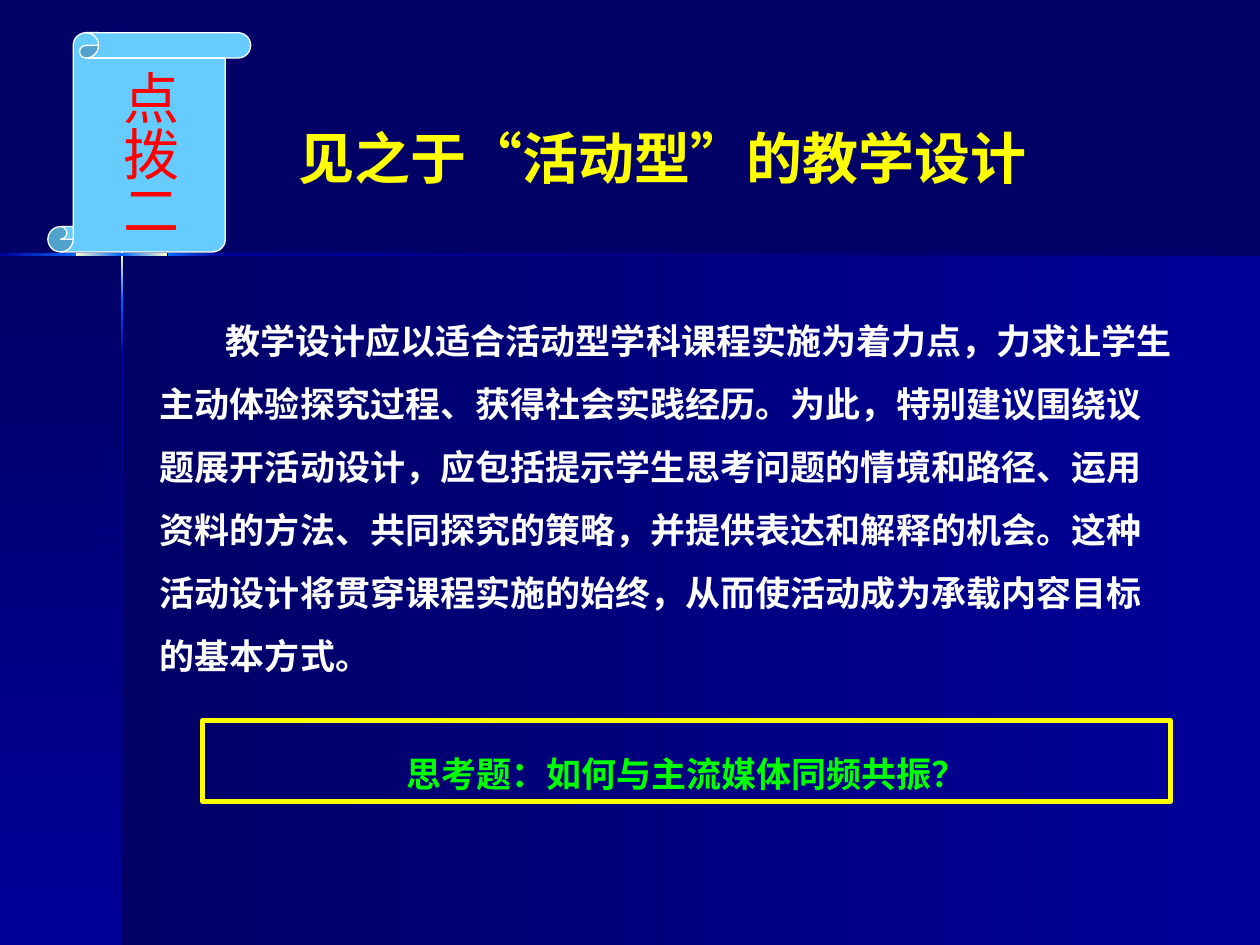
from copy import deepcopy

from pptx import Presentation
from pptx.dml.color import RGBColor
from pptx.enum import shapes, text
from pptx.oxml.ns import qn
from pptx.util import Inches, Pt

COLORS = {
    "navy": "000066", "blue": "000099", "bright": "0066FF", "cream": "FFFFCC",
    "sky": "66CCFF", "white": "FFFFFF", "yellow": "FFFF00", "red": "FF0000",
    "green": "00FF00",
}
ACROSS, DOWN = 0, 270
CJK = "Noto Sans CJK SC"


def color(name):
    return RGBColor.from_string(COLORS[name])


def write(shape, words, font, size, ink, bold, frame_format, paragraph_format):
    """Put one formatted paragraph into the shape."""
    frame = shape.text_frame
    for key, value in frame_format.items():
        setattr(frame, key, value)
    paragraph = frame.paragraphs[0]
    for key, value in paragraph_format.items():
        setattr(paragraph, key, value)
    run = paragraph.add_run()
    run.text = words
    for key, value in {"name": font, "size": Pt(size), "bold": bold}.items():
        setattr(run.font, key, value)
    run.font.color.rgb = color(ink)
    if font == CJK:
        east_asian = run.font._element.makeelement(qn("a:ea"), {"typeface": font})
        run.font._element.append(east_asian)
    return paragraph


prs = Presentation()
prs.slide_width, prs.slide_height = Inches(10), Inches(7.5)
slide = prs.slides.add_slide(prs.slide_layouts[6])
slide.background.fill.solid()
slide.background.fill.fore_color.rgb = color("navy")

# Backdrop: two panels and the thin glowing cross between them
backdrop = [
    (0.97, 2.02, 9.03, 5.48, ACROSS, ["navy", "blue"]),
    (0, 2.02, 0.97, 5.48, DOWN, ["navy", "blue"]),
    (0.96, 0.01, 0.02, 1.2, DOWN, ["navy", "blue"]),
    (0.96, 2.82, 0.02, 4.68, DOWN, ["blue", "navy"]),
    (1.77, 2.01, 8.23, 0.02, ACROSS, ["blue", "navy"]),
    (0.96, 2.38, 0.02, 0.44, DOWN, ["bright", "blue"]),
    (0.96, 1.21, 0.02, 0.44, DOWN, ["blue", "bright"]),
    (0.96, 1.65, 0.02, 0.73, DOWN, ["bright", "cream", "bright"]),
    (0, 2.01, 0.61, 0.02, ACROSS, ["blue", "bright"]),
    (1.33, 2.01, 0.44, 0.02, ACROSS, ["bright", "blue"]),
    (0.6, 2.01, 0.73, 0.02, ACROSS, ["cream", "bright", "cream"]),
]
for left, top, width, height, angle, stops in backdrop:
    panel = slide.shapes.add_shape(
        shapes.MSO_SHAPE.RECTANGLE, Inches(left), Inches(top), Inches(width), Inches(height))
    panel.shadow.inherit = False
    panel.line.fill.background()
    panel.fill.gradient()
    panel.fill.gradient_angle = angle
    stop_list = panel._element.spPr.find(".//" + qn("a:gsLst"))
    if len(stops) == 3:
        stop_list.insert(1, deepcopy(stop_list[0]))
    for number, (stop, name) in enumerate(zip(panel.fill.gradient_stops, stops)):
        stop.position = number / (len(stops) - 1)
        stop.color.rgb = color(name)

# The bottom margin lifts the heading above the horizontal rule
heading = slide.shapes.add_textbox(Inches(0.98), Inches(0.76), Inches(8.56), Inches(1.49))
write(heading, "见之于“活动型”的教学设计", CJK, 32, "yellow", True,
      {"word_wrap": True, "vertical_anchor": text.MSO_ANCHOR.MIDDLE,
       "margin_bottom": Inches(0.57)},
      {"alignment": text.PP_ALIGN.CENTER})

advice = slide.shapes.add_textbox(Inches(1.17), Inches(2.17), Inches(8.25), Inches(4.5))
advice_paragraph = write(
    advice,
    "教学设计应以适合活动型学科课程实施为着力点，力求让学生主动体验探究过程、"
    "获得社会实践经历。为此，特别建议围绕议题展开活动设计，应包括提示学生思考问题的"
    "情境和路径、运用资料的方法、共同探究的策略，并提供表达和解释的机会。这种活动设计"
    "将贯穿课程实施的始终，从而使活动成为承载内容目标的基本方式。",
    "Arial", 20, "white", True,
    {"word_wrap": True, "margin_top": Inches(0.2)},
    {"line_spacing": 1.5, "space_before": Pt(4)})
advice_paragraph._p.get_or_add_pPr().set("indent", str(Inches(0.52)))

scroll = slide.shapes.add_shape(
    shapes.MSO_SHAPE.VERTICAL_SCROLL, Inches(0.38), Inches(0.26), Inches(1.61), Inches(1.74))
scroll.shadow.inherit = False
scroll.fill.solid()
scroll.fill.fore_color.rgb = color("sky")
scroll.line.color.rgb = color("white")
scroll.line.width = Pt(0.75)
write(scroll, "点拨二", "Cabin", 32, "red", False,
      {"word_wrap": False, "vertical_anchor": text.MSO_ANCHOR.MIDDLE},
      {"alignment": text.PP_ALIGN.CENTER})
scroll.text_frame._txBody.bodyPr.set("vert", "eaVert")

question = slide.shapes.add_shape(
    shapes.MSO_SHAPE.RECTANGLE, Inches(1.61), Inches(5.72), Inches(7.68), Inches(0.64))
question.shadow.inherit = False
question.fill.background()
question.line.color.rgb = color("yellow")
question.line.width = Pt(3)
write(question, "思考题：如何与主流媒体同频共振？", CJK, 20, "green", True,
      {"word_wrap": True, "vertical_anchor": text.MSO_ANCHOR.TOP,
       "auto_size": text.MSO_AUTO_SIZE.SHAPE_TO_FIT_TEXT},
      {"alignment": text.PP_ALIGN.CENTER, "line_spacing": 1.6})

prs.save("out.pptx")
